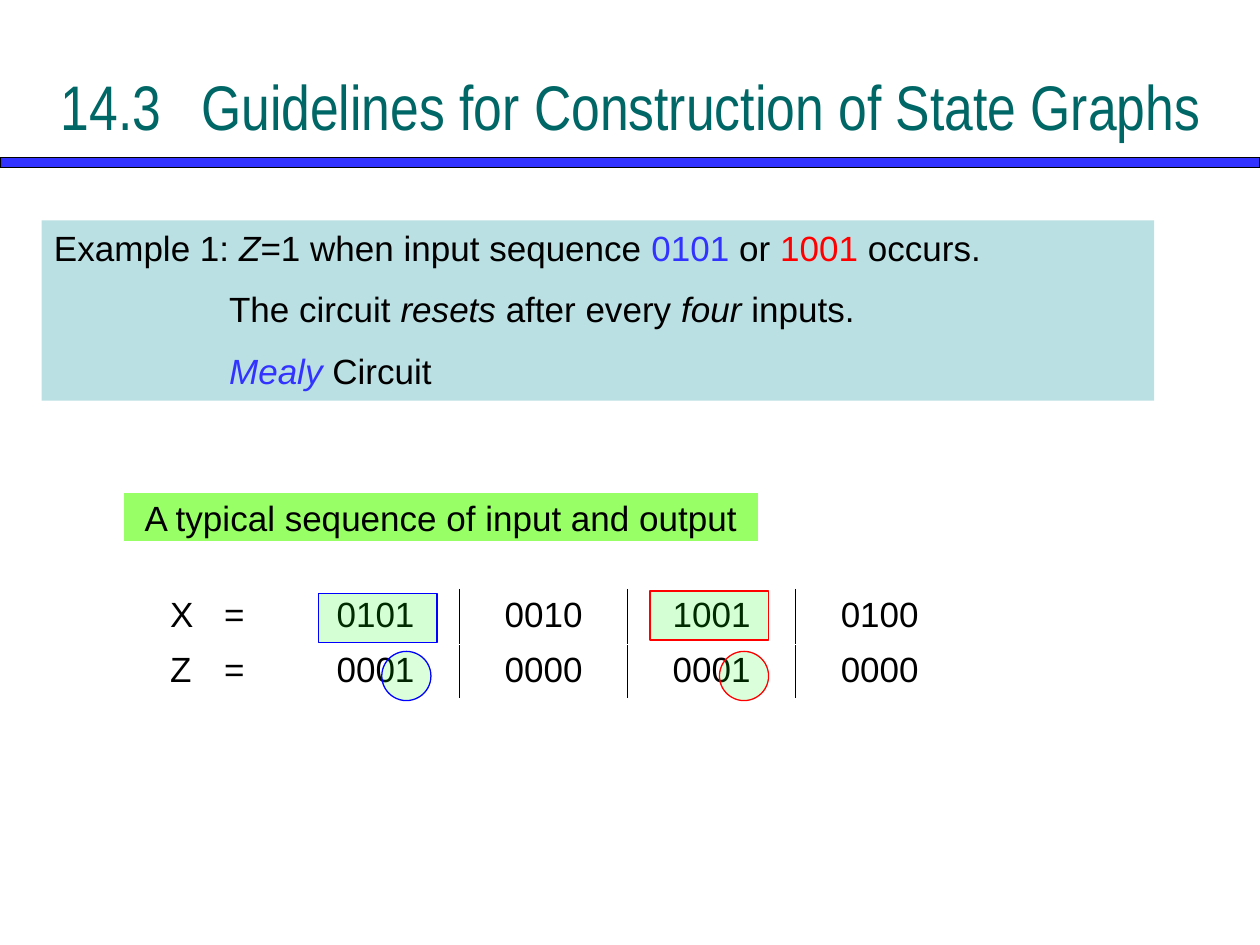
from lxml import etree
from pptx import Presentation
from pptx.dml.color import RGBColor
from pptx.enum import shapes, text
from pptx.oxml.ns import qn
from pptx.util import Inches, Pt

COLUMNS, ROWS = 100, 75
RECTANGLE = shapes.MSO_SHAPE.RECTANGLE
OVAL = shapes.MSO_SHAPE.OVAL
BLACK, BLUE, RED = "000000", "3333FF", "FF0000"


def color(value):
    return RGBColor.from_string(value)


class SlideBuilder:
    font = "Arial"
    size = 20

    def __init__(self, width, height):
        self.presentation = Presentation()
        self.presentation.slide_width = Inches(width)
        self.presentation.slide_height = Inches(height)
        self.slide = self.presentation.slides.add_slide(self.presentation.slide_layouts[6])

    def place(self, left, top, width, height):
        column = self.presentation.slide_width / COLUMNS
        row = self.presentation.slide_height / ROWS
        return [round(n * unit) for n, unit in zip((left, top, width, height), (column, row) * 2)]

    def add_runs(self, paragraph, parts, font=None, size=None):
        for content, ink, italic in parts:
            run = paragraph.add_run()
            run.text = content
            run.font.name = font or self.font
            run.font.size = Pt(size or self.size)
            run.font.color.rgb = color(ink)
            run.font.italic = italic

    def title(self, box, content, ink):
        frame = self.slide.shapes.add_textbox(*self.place(*box)).text_frame
        frame.word_wrap = True
        frame.vertical_anchor = text.MSO_ANCHOR.MIDDLE
        frame.paragraphs[0].alignment = text.PP_ALIGN.CENTER
        self.add_runs(frame.paragraphs[0], [(content, ink, False)], "Arial Narrow", 36)

    def panel(self, kind, box, fill, line=None, opacity=None):
        shape = self.slide.shapes.add_shape(kind, *self.place(*box))
        shape.shadow.inherit = False
        shape.fill.solid()
        shape.fill.fore_color.rgb = color(fill)
        if opacity:
            tint = shape._element.spPr.find(qn("a:solidFill"))[0]
            etree.SubElement(tint, qn("a:alpha"), val=str(opacity * 1000))
        if line:
            shape.line.color.rgb = color(line)
            shape.line.width = Pt(0.75)
        else:
            shape.line.fill.background()
        return shape

    def label(self, box, content, fill, line):
        frame = self.panel(RECTANGLE, box, fill, line).text_frame
        frame.word_wrap = False
        frame.vertical_anchor = text.MSO_ANCHOR.MIDDLE
        frame.paragraphs[0].alignment = text.PP_ALIGN.CENTER
        self.add_runs(frame.paragraphs[0], [(content, BLACK, False)])

    def statement(self, box, fill, lines, indent):
        frame = self.panel(RECTANGLE, box, fill).text_frame
        frame.word_wrap = True
        frame.vertical_anchor = text.MSO_ANCHOR.TOP
        for index, parts in enumerate(lines):
            paragraph = frame.add_paragraph() if index else frame.paragraphs[0]
            paragraph.alignment = text.PP_ALIGN.LEFT
            if index:
                paragraph.space_before = Pt(11)
                paragraph._p.get_or_add_pPr().set("marL", str(Inches(indent)))
            self.add_runs(paragraph, parts)

    def border(self, cell, side):
        line = etree.Element(qn(f"a:{side}"), w=str(Pt(1)))
        fill = etree.SubElement(line, qn("a:solidFill"))
        etree.SubElement(fill, qn("a:srgbClr"), val=BLACK)
        cell._tc.get_or_add_tcPr().insert(0, line)

    def row_name(self, cell):
        cell.margin_left = Inches(0.37)
        paragraph = cell.text_frame.paragraphs[0]
        paragraph.alignment = text.PP_ALIGN.LEFT
        stops = etree.SubElement(paragraph._p.get_or_add_pPr(), qn("a:tabLst"))
        etree.SubElement(stops, qn("a:tab"), pos=str(Inches(0.43)), algn="l")

    def table(self, box, rows):
        place = self.place(*box)
        table = self.slide.shapes.add_table(len(rows), len(rows[0]), *place).table
        table.first_row = table.horz_banding = False
        for r, values in enumerate(rows):
            for c, value in enumerate(values):
                cell = table.cell(r, c)
                cell.fill.background()
                paragraph = cell.text_frame.paragraphs[0]
                paragraph.alignment = text.PP_ALIGN.CENTER
                self.add_runs(paragraph, [(value, BLACK, False)])
                if c == 0:
                    self.row_name(cell)
                if 0 < c < len(values) - 1:
                    self.border(cell, "lnR")
                if c > 1:
                    self.border(cell, "lnL")


def main():
    builder = SlideBuilder(10, 7.5)
    builder.panel(RECTANGLE, (0, 12.5, COLUMNS, 0.8), BLUE, BLACK)
    builder.title((2, 2.1, 96.1, 12.5),
                  "14.3\t Guidelines for Construction of State Graphs", "006666")
    builder.statement((3.3, 17.5, 88.3, 14.3), "BBE0E3", [
        [("Example 1: ", BLACK, False), ("Z", BLACK, True),
         ("=1 when input sequence ", BLACK, False), ("0101", BLUE, False),
         (" or ", BLACK, False), ("1001", RED, False), (" occurs.", BLACK, False)],
        [("The circuit ", BLACK, False), ("resets", BLACK, True),
         (" after every ", BLACK, False), ("four", BLACK, True),
         (" inputs.", BLACK, False)],
        [("Mealy", BLUE, True), (" Circuit", BLACK, False)],
    ], indent=1.39)
    builder.table((9.8, 46.8, 66.7, 8.7), [
        ["X\t=", "0101", "0010", "1001", "0100"],
        ["Z\t=", "0001", "0000", "0001", "0000"],
    ])
    builder.label((9.8, 39.1, 50.4, 3.9), "A typical sequence of input and output",
                  "99FF66", "FFFFFF")
    for left, top, circle_left, line in ((25.3, 47.1, 30.3, "0000FF"), (51.6, 46.9, 57.1, RED)):
        builder.panel(RECTANGLE, (left, top, 9.4, 3.9), "00FF00", line, opacity=17)
        builder.panel(OVAL, (circle_left, 51.7, 3.9, 3.9), "00FF00", line, opacity=14)
    builder.presentation.save("out.pptx")


if __name__ == "__main__":
    main()
